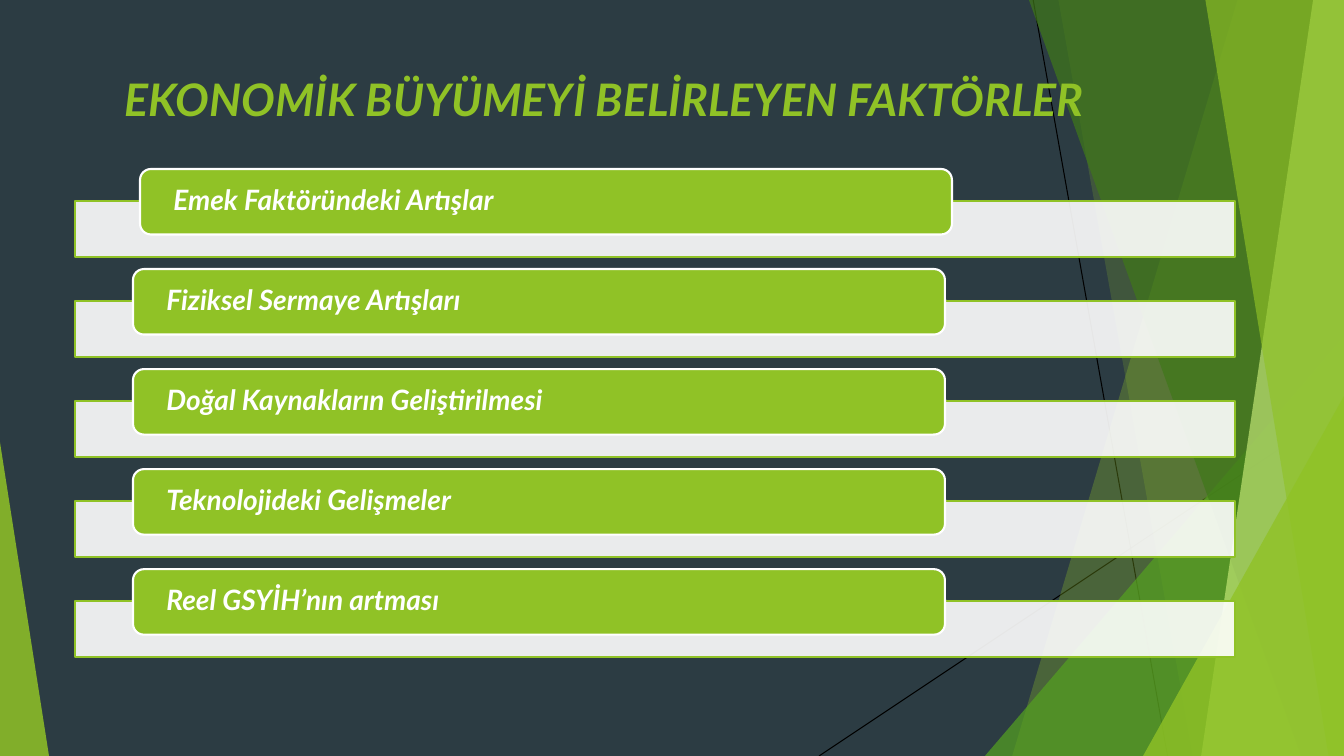
import pptx
import pptx.util
import pptx.dml.color
import pptx.enum.shapes
import pptx.enum.text
import pptx.oxml.ns
import lxml.etree

Pt = pptx.util.Pt
RGB = pptx.dml.color.RGBColor
KIND = pptx.enum.shapes.MSO_SHAPE
ALIGN = pptx.enum.text.PP_ALIGN
ANCHOR = pptx.enum.text.MSO_ANCHOR
qn = pptx.oxml.ns.qn

SLATE = RGB(0x2C, 0x3C, 0x43)
LIME = RGB(0x90, 0xC2, 0x26)
GREEN = RGB(0x54, 0xA0, 0x21)
FOREST = RGB(0x3F, 0x78, 0x19)
PALE = RGB(0xC0, 0xE4, 0x74)
WHITE = RGB(0xFF, 0xFF, 0xFF)
BLACK = RGB(0, 0, 0)

WIDE, HIGH = 960, 540
STEP = 71.46
TITLE = "EKONOMİK BÜYÜMEYİ BELİRLEYEN FAKTÖRLER"
FACTORS = [
    "Emek Faktöründeki Artışlar",
    "Fiziksel Sermaye Artışları",
    "Doğal Kaynakların Geliştirilmesi",
    "Teknolojideki Gelişmeler",
    "Reel GSYİH’nın artması",
]


def paint(shape, color, alpha=100, edge=None):
    """Set fill, opacity in percent and outline, without a shadow."""
    shape.shadow.inherit = False
    shape.fill.solid()
    shape.fill.fore_color.rgb = color
    if alpha < 100:
        tone = shape._element.spPr.find(qn("a:solidFill"))[0]
        lxml.etree.SubElement(tone, qn("a:alpha"), val=str(alpha * 1000))
    if edge is None:
        shape.line.fill.background()
    else:
        shape.line.color.rgb = edge
        shape.line.width = Pt(1.5)


def add_box(slide, kind, left, top, width, height, color, **style):
    shape = slide.shapes.add_shape(kind, Pt(left), Pt(top), Pt(width), Pt(height))
    paint(shape, color, **style)
    return shape


def add_wedge(slide, left, top, width, peak, color, alpha):
    """Add a triangle that stands on the slide's bottom edge."""
    shape = add_box(slide, KIND.ISOSCELES_TRIANGLE, left, top, width, HIGH - top,
                    color, alpha=alpha)
    shape.adjustments[0] = peak


def add_sheet(slide, upper, lower, color, alpha):
    """Add a full-height sheet from a slanted left edge to the slide's right."""
    pen = slide.shapes.build_freeform(Pt(upper), 0)
    corners = [(WIDE, 0), (WIDE, HIGH), (lower, HIGH)]
    pen.add_line_segments([(Pt(x), Pt(y)) for x, y in corners], close=True)
    paint(pen.convert_to_shape(), color, alpha)


def add_line(slide, x1, y1, x2, y2):
    line = slide.shapes.add_connector(
        pptx.enum.shapes.MSO_CONNECTOR.STRAIGHT, Pt(x1), Pt(y1), Pt(x2), Pt(y2))
    line.line.color.rgb = BLACK
    line.line.width = Pt(0.75)
    lxml.etree.SubElement(line._element.spPr, qn("a:effectLst"))


def write(shape, text, size, color, align=ALIGN.LEFT, anchor=ANCHOR.TOP,
          inset=(7.2, 3.6), spacing=1.0):
    frame = shape.text_frame
    frame.word_wrap = True
    frame.vertical_anchor = anchor
    frame.margin_left = frame.margin_right = Pt(inset[0])
    frame.margin_top = frame.margin_bottom = Pt(inset[1])
    para = frame.paragraphs[0]
    para.alignment = align
    para.line_spacing = spacing
    run = para.add_run()
    run.text = text
    run.font.name = "Lato"
    run.font.size = Pt(size)
    run.font.bold = run.font.italic = True
    run.font.color.rgb = color


def add_backdrop(slide):
    slide.background.fill.solid()
    slide.background.fill.fore_color.rgb = SLATE
    add_line(slide, 738, 0, 834, HIGH)
    add_line(slide, WIDE, 290, 585, HIGH)
    add_sheet(slide, 884, 723, LIME, 30)
    add_sheet(slide, 756, 852, LIME, 20)
    add_wedge(slide, 703.5, 240, 256.5, 1, GREEN, 72)
    add_sheet(slide, 735, 929.5, FOREST, 70)
    add_sheet(slide, 938, 858, PALE, 70)
    add_sheet(slide, 861, 949, LIME, 65)
    add_wedge(slide, 816.5, 283, 143.5, 1, LIME, 80)
    add_wedge(slide, 0, 316, 35, 0, LIME, 85)


def add_factor(slide, index, text):
    drop = index * STEP
    left = 100 if index == 0 else 95
    add_box(slide, KIND.RECTANGLE, 53.5, 143.7 + drop, 828.5, 39.6, WHITE,
            alpha=90, edge=LIME)
    pill = add_box(slide, KIND.ROUNDED_RECTANGLE, left, 120.7 + drop, 580, 46.8,
                   LIME, edge=WHITE)
    write(pill, text, 20, WHITE, anchor=ANCHOR.MIDDLE, inset=(21.6, 0), spacing=0.9)


def main():
    deck = pptx.Presentation()
    deck.slide_width, deck.slide_height = Pt(WIDE), Pt(HIGH)
    slide = deck.slides.add_slide(deck.slide_layouts[6])
    add_backdrop(slide)
    title = slide.shapes.add_textbox(Pt(53.5), Pt(48), Pt(756.5), Pt(55))
    write(title, TITLE, 32, LIME, align=ALIGN.CENTER)
    for index, text in enumerate(FACTORS):
        add_factor(slide, index, text)
    deck.save("out.pptx")


if __name__ == "__main__":
    main()
